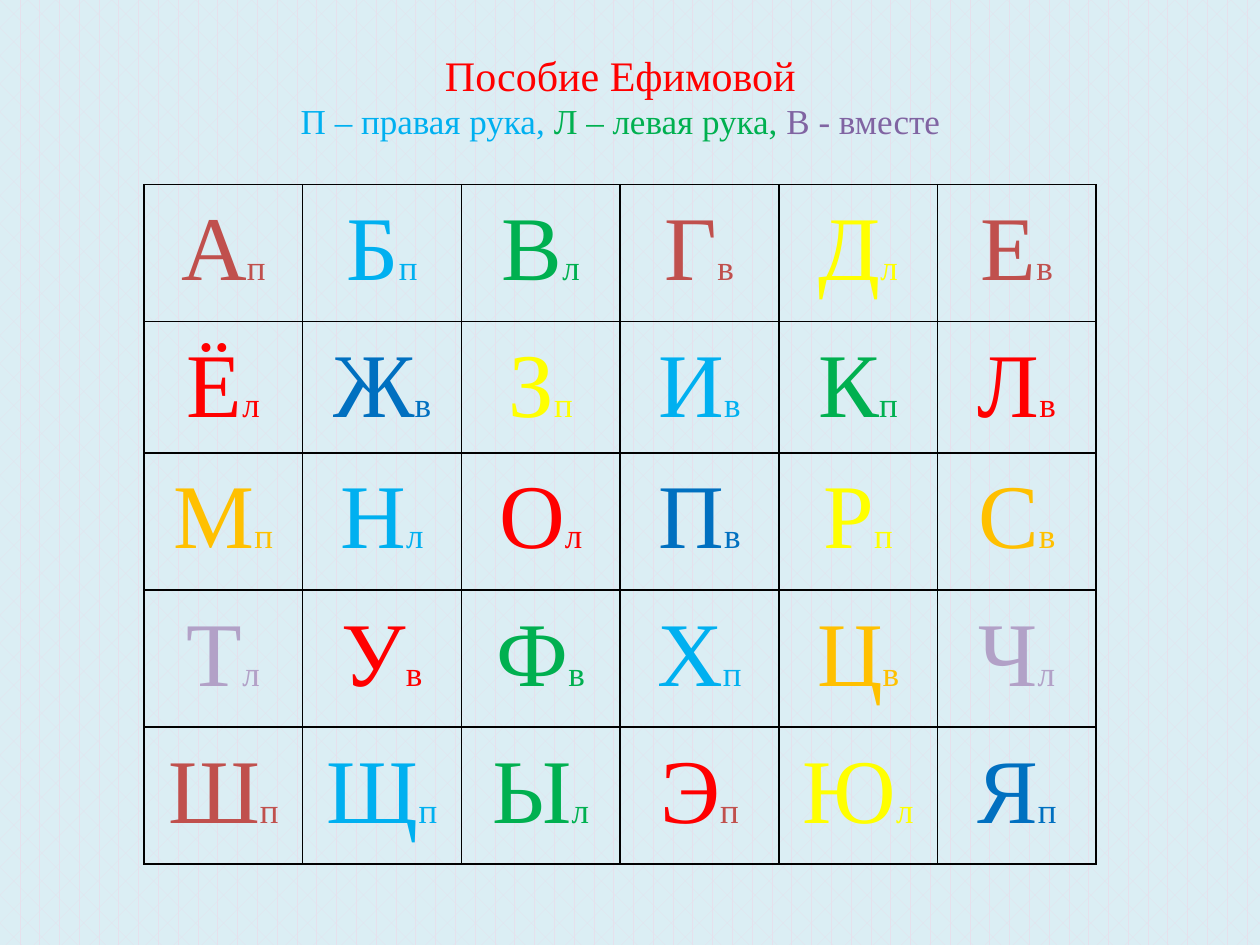
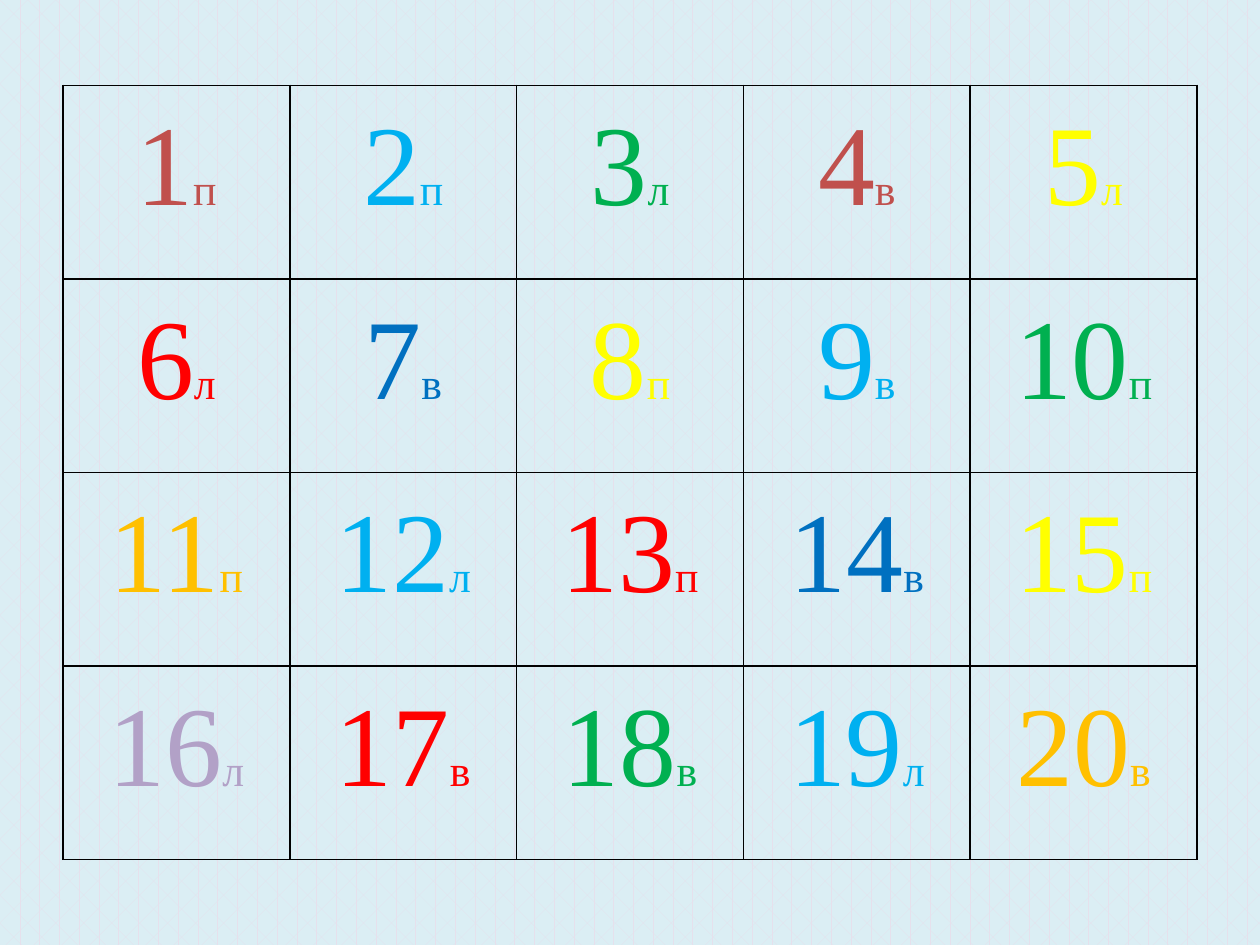
from dataclasses import dataclass

from lxml.etree import SubElement
from pptx import Presentation
from pptx.dml.color import RGBColor as Rgb
from pptx.enum.dml import MSO_PATTERN as Pattern
from pptx.enum.text import MSO_ANCHOR as Anchor, PP_ALIGN as Align
from pptx.oxml.ns import qn
from pptx.util import Pt


@dataclass(frozen=True)
class Theme:
    font: str = "Times New Roman"
    back: str = "DBEEF4"
    weave: str = "E6E0EC"
    line: str = "000000"
    brick: str = "C0504D"
    sky: str = "00B0F0"
    green: str = "00B050"
    yellow: str = "FFFF00"
    red: str = "FF0000"
    blue: str = "0070C0"
    gold: str = "FFC000"
    lilac: str = "B2A1C7"
    violet: str = "8064A2"
    head: int = 24
    sub: int = 20
    letter: tuple = (52, 20)
    number: tuple = (65, 25)


T = Theme()

# Both tables share these colours; the narrower one uses the first columns.
HUES = [
    [T.brick, T.sky, T.green, T.brick, T.yellow, T.brick],
    [T.red, T.blue, T.yellow, T.sky, T.green, T.red],
    [T.gold, T.sky, T.red, T.blue, T.yellow, T.gold],
    [T.lilac, T.red, T.green, T.sky, T.gold, T.lilac],
    [T.brick, T.sky, T.green, T.red, T.yellow, T.blue],
]
ODD = {"Э": T.brick}  # hand mark coloured unlike its letter

LETTERS = ["АБВГДЕ", "ЁЖЗИКЛ", "МНОПРС", "ТУФХЦЧ", "ШЩЫЭЮЯ"]
LETTER_HANDS = ["пплвлв", "лвпвпв", "пллвпв", "лввпвл", "пплплп"]
NUMBERS = [[str(5 * row + col) for col in range(1, 6)] for row in range(4)]
NUMBER_HANDS = ["пплвл", "лвпвп", "плпвп", "лввлв"]


class Deck:
    def __init__(self, theme):
        self.theme = theme
        self.prs = Presentation()
        self.prs.slide_width, self.prs.slide_height = Pt(720), Pt(540)
        self.slide = None

    def page(self):
        self.slide = self.prs.slides.add_slide(self.prs.slide_layouts[6])
        fill = self.slide.background.fill
        fill.patterned()
        fill.pattern = Pattern.DIVOT
        fill.fore_color.rgb = Rgb.from_string(self.theme.weave)
        fill.back_color.rgb = Rgb.from_string(self.theme.back)

    def label(self, para, parts):
        """Fill a centred paragraph with (text, size, colour) runs."""
        para.alignment = Align.CENTER
        for text, size, color in parts:
            run = para.add_run()
            run.text = text
            run.font.name = self.theme.font
            run.font.size = Pt(size)
            run.font.color.rgb = Rgb.from_string(color)

    def title(self, box, lines):
        frame = self.slide.shapes.add_textbox(*map(Pt, box)).text_frame
        frame.word_wrap = True
        frame.vertical_anchor = Anchor.TOP
        frame.margin_top = Pt(7)
        for i, parts in enumerate(lines):
            para = frame.add_paragraph() if i else frame.paragraphs[0]
            self.label(para, parts)

    def border(self, cell):
        props = cell._tc.get_or_add_tcPr()
        for i, side in enumerate(("lnL", "lnR", "lnT", "lnB")):
            line = props.makeelement(qn(f"a:{side}"), {"w": str(Pt(1))})
            fill = SubElement(line, qn("a:solidFill"))
            SubElement(fill, qn("a:srgbClr"), val=self.theme.line)
            props.insert(i, line)

    def grid(self, spot, width, heights, signs, hands, sizes, inset):
        """Draw a table of large signs, each with a small hand mark."""
        count = len(signs[0])
        frame = self.slide.shapes.add_table(
            len(signs), count, *map(Pt, spot),
            Pt(width * count), Pt(sum(heights)))
        table = frame.table
        table.first_row = table.horz_banding = False
        for col in table.columns:
            col.width = Pt(width)
        for r, row in enumerate(zip(signs, hands, HUES)):
            table.rows[r].height = Pt(heights[r])
            for c, (sign, hand, hue) in enumerate(zip(*row)):
                cell = table.cell(r, c)
                cell.fill.background()
                cell.margin_left = cell.margin_right = Pt(inset)
                cell.margin_top = cell.margin_bottom = 0
                para = cell.text_frame.paragraphs[0]
                para.line_spacing = 1.15
                self.label(para, [(sign, sizes[0], hue),
                                  (hand, sizes[1], ODD.get(sign, hue))])
                self.border(cell)


def main():
    deck = Deck(T)

    deck.page()
    deck.title((144.5, 21, 420, 85), [
        [("Пособие Ефимовой", T.head, T.red)],
        [("П – правая рука, ", T.sub, T.sky),
         ("Л – левая рука, ", T.sub, T.green),
         ("В - вместе", T.sub, T.violet)],
    ])
    deck.grid((82.3, 105.5), 90.7, [78.3, 75, 78.3, 78.3, 78.3],
              LETTERS, LETTER_HANDS, T.letter, 3.6)

    deck.page()
    deck.grid((36, 48.8), 129.6, [110.6] * 4,
              NUMBERS, NUMBER_HANDS, T.number, 5)

    deck.prs.save("out.pptx")


if __name__ == "__main__":
    main()
